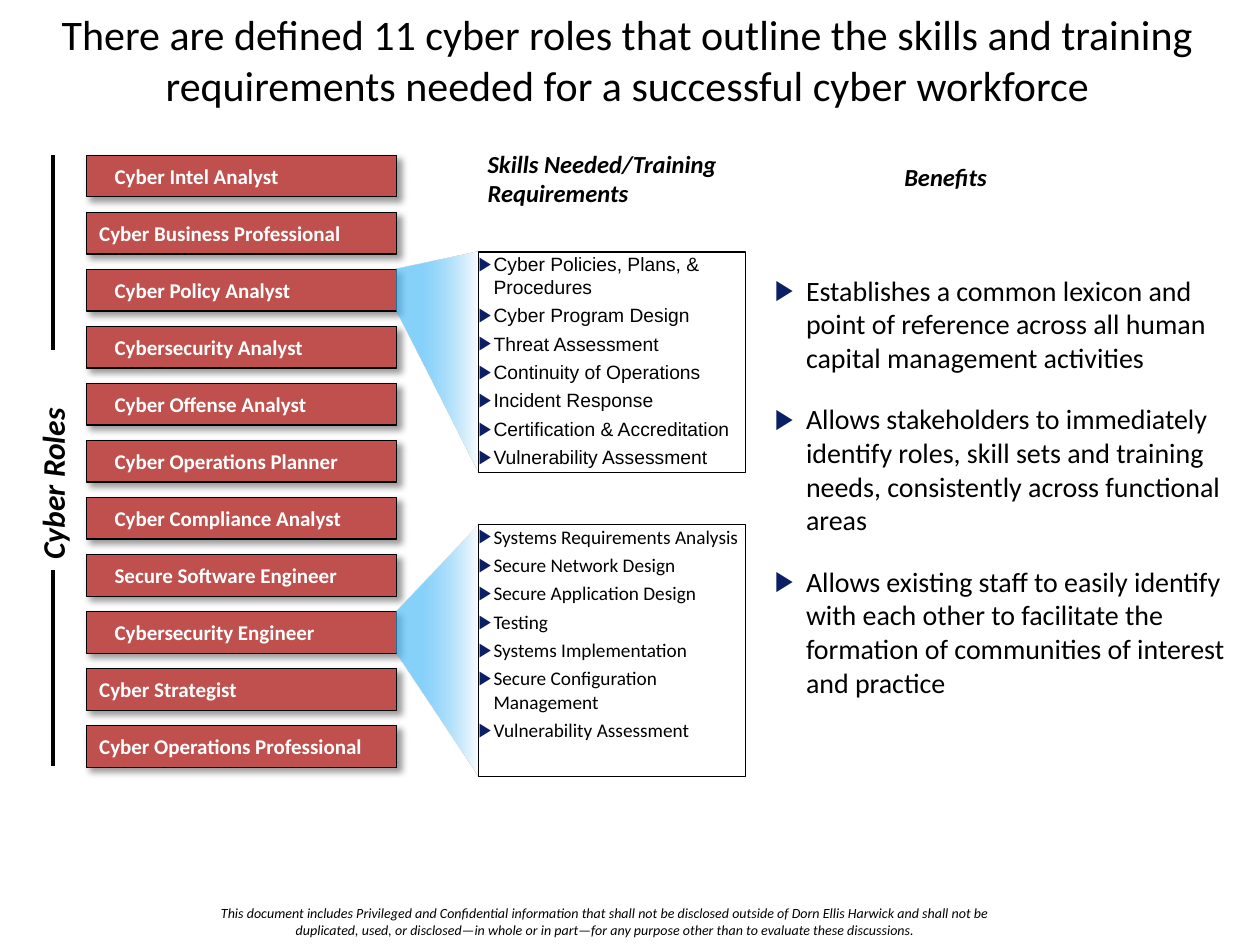
import pptx
import pptx.util
import pptx.dml.color
import pptx.enum.dml
import pptx.enum.shapes
import pptx.enum.text
import pptx.oxml
import pptx.oxml.ns
from lxml import etree

Cm = pptx.util.Cm
Pt = pptx.util.Pt
RGBColor = pptx.dml.color.RGBColor
RECTANGLE = pptx.enum.shapes.MSO_SHAPE.RECTANGLE
STRAIGHT = pptx.enum.shapes.MSO_CONNECTOR.STRAIGHT
ANCHOR = pptx.enum.text.MSO_ANCHOR
ALIGN = pptx.enum.text.PP_ALIGN
qn = pptx.oxml.ns.qn

BLACK = RGBColor(0x00, 0x00, 0x00)
WHITE = RGBColor(0xFF, 0xFF, 0xFF)
ROLE_RED = RGBColor(0xC0, 0x50, 0x4D)
BULLET_NAVY = RGBColor(0x0B, 0x1F, 0x65)
WEDGE_BLUE = RGBColor(0x4E, 0xBC, 0xF9)
WEDGE_PALE = RGBColor(0xFD, 0xFD, 0xFE)
NS = 'xmlns:a="http://schemas.openxmlformats.org/drawingml/2006/main"'


def write(tf, *texts, size, font="Calibri", color=BLACK, bold=False, italic=False,
          align=ALIGN.LEFT, anchor=ANCHOR.TOP, margins=(0.25, 0.13, 0.25, 0.13),
          indent=0, gap=0):
    """Fill a text frame, one paragraph per text; an indent makes them bullets."""
    tf.word_wrap = True
    tf.auto_size = pptx.enum.text.MSO_AUTO_SIZE.NONE
    tf.vertical_anchor = anchor
    tf.margin_left, tf.margin_top, tf.margin_right, tf.margin_bottom = map(Cm, margins)
    for i, text in enumerate(texts):
        p = tf.add_paragraph() if i else tf.paragraphs[0]
        if indent:
            pPr = p._p.get_or_add_pPr()
            pPr.set("marL", str(Cm(indent)))
            pPr.set("indent", str(-Cm(indent)))
            for xml in (f'<a:buClr {NS}><a:srgbClr val="{BULLET_NAVY}"/></a:buClr>',
                        f'<a:buFont {NS} typeface="Arial"/>',
                        f'<a:buChar {NS} char="▶"/>'):
                pPr.append(pptx.oxml.parse_xml(xml))
        p.alignment = align
        p.space_before = Pt(gap if i else 0)
        r = p.add_run()
        r.text = text
        r.font.name, r.font.size, r.font.color.rgb = font, Pt(size), color
        r.font.bold, r.font.italic = bold, italic


prs = pptx.Presentation()
prs.slide_width, prs.slide_height = Cm(25.4), Cm(19.05)
s = prs.slides.add_slide(prs.slide_layouts[5])

title = s.shapes.title
title.left, title.top, title.width, title.height = Cm(0.84), Cm(0.2), Cm(23.62), Cm(1.98)
write(title.text_frame,
      "There are defined 11 cyber roles that outline the skills and training "
      "requirements needed for a successful cyber workforce",
      size=24, align=ALIGN.CENTER, anchor=ANCHOR.MIDDLE)

# Column of roles: name and left inset
ROLE_LEFT, ROLE_TOP, ROLE_WIDTH, ROLE_HEIGHT, ROLE_PITCH = 1.75, 3.13, 6.25, 0.84, 1.15
roles = [("Cyber Intel Analyst", 0.56), ("Cyber Business Professional", 0.25),
         ("Cyber Policy Analyst", 0.56), ("Cybersecurity Analyst", 0.56),
         ("Cyber Offense Analyst", 0.56), ("Cyber Operations Planner", 0.56),
         ("Cyber Compliance Analyst", 0.56), ("Secure Software Engineer", 0.56),
         ("Cybersecurity Engineer", 0.56), ("Cyber Strategist", 0.25),
         ("Cyber Operations Professional", 0.25)]
for i, (role, inset) in enumerate(roles):
    sp = s.shapes.add_shape(RECTANGLE, Cm(ROLE_LEFT), Cm(ROLE_TOP + i * ROLE_PITCH),
                            Cm(ROLE_WIDTH), Cm(ROLE_HEIGHT))
    sp.fill.solid()
    sp.fill.fore_color.rgb = ROLE_RED
    sp.line.color.rgb, sp.line.width = BLACK, Pt(0.75)
    sp.shadow.inherit = False
    sp._element.spPr.find(qn("a:effectLst")).append(pptx.oxml.parse_xml(
        f'<a:outerShdw {NS} blurRad="{Pt(4)}" dist="{Pt(3)}" dir="2700000" algn="tl" '
        'rotWithShape="0"><a:srgbClr val="000000"><a:alpha val="40000"/></a:srgbClr>'
        '</a:outerShdw>'))
    write(sp.text_frame, role, size=12, color=WHITE, bold=True,
          anchor=ANCHOR.MIDDLE, margins=(inset, 0, 0.25, 0))

# Vertical label between two rules
label = s.shapes.add_textbox(Cm(-1.17), Cm(8.79), Cm(4.45), Cm(1.02))
label.rotation = 270
write(label.text_frame, "Cyber Roles", size=18, bold=True, italic=True)
for top, bottom in ((3.13, 7.06), (11.5, 15.44)):
    rule = s.shapes.add_connector(STRAIGHT, Cm(1.07), Cm(top), Cm(1.07), Cm(bottom))
    rule.line.color.rgb, rule.line.width = BLACK, Pt(2.25)
    etree.SubElement(rule._element.spPr, qn("a:effectLst"))

for heading, left, top, width, height in (
        ("Skills Needed/Training Requirements", 9.58, 2.87, 5.54, 1.45),
        ("Benefits", 17.98, 3.13, 3.84, 0.86)):
    tb = s.shapes.add_textbox(Cm(left), Cm(top), Cm(width), Cm(height))
    write(tb.text_frame, heading, size=14, bold=True, italic=True)

# Skill lists, each fanned out from its role
SKILLS_LEFT, SKILLS_WIDTH = 9.65, 5.38
skill_lists = [
    (2, 5.08, 4.45, "Arial",
     ["Cyber Policies, Plans, & Procedures", "Cyber Program Design", "Threat Assessment",
      "Continuity of Operations", "Incident Response", "Certification & Accreditation",
      "Vulnerability Assessment"]),
    (8, 10.58, 5.08, "Calibri",
     ["Systems Requirements Analysis", "Secure Network Design",
      "Secure Application Design", "Testing", "Systems Implementation",
      "Secure Configuration Management", "Vulnerability Assessment"]),
]
for row, top, height, font, skills in skill_lists:
    role_right, role_top = ROLE_LEFT + ROLE_WIDTH, ROLE_TOP + row * ROLE_PITCH
    fb = s.shapes.build_freeform(Cm(role_right), Cm(role_top))
    fb.add_line_segments([(Cm(SKILLS_LEFT), Cm(top)),
                          (Cm(SKILLS_LEFT), Cm(top + height)),
                          (Cm(role_right), Cm(role_top + ROLE_HEIGHT))], close=True)
    wedge = fb.convert_to_shape()
    wedge.shadow.inherit = False
    wedge.line.fill.background()
    wedge.fill.gradient()
    wedge.fill.gradient_angle = 0
    near, far = wedge.fill.gradient_stops
    near.position, near.color.rgb = 0.32, WEDGE_BLUE
    far.position, far.color.rgb = 1, WEDGE_PALE
    near_color = next(wedge._element.spPr.iter(qn("a:srgbClr")))
    etree.SubElement(near_color, qn("a:alpha")).set("val", "67000")

    box = s.shapes.add_shape(RECTANGLE, Cm(SKILLS_LEFT), Cm(top),
                             Cm(SKILLS_WIDTH), Cm(height))
    box.shadow.inherit = False
    box.fill.background()
    box.line.color.rgb, box.line.width = BLACK, Pt(0.75)
    write(box.text_frame, *skills, size=11, font=font, margins=(0, 0, 0, 0),
          indent=0.3, gap=3)

benefits = s.shapes.add_textbox(Cm(15.62), Cm(5.51), Cm(9.37), Cm(4.45))
write(benefits.text_frame,
      "Establishes a common lexicon and point of reference across all human capital "
      "management activities",
      "Allows stakeholders to immediately identify roles, skill sets and training needs, "
      "consistently across functional areas",
      "Allows existing staff to easily identify with each other to facilitate the "
      "formation of communities of interest and practice",
      size=16, margins=(0, 0, 0, 0), indent=0.63, gap=16)

notice = s.shapes.add_textbox(Cm(3.94), Cm(18.24), Cm(16.54), Cm(0.69))
write(notice.text_frame,
      "This document includes Privileged and Confidential information that shall not be "
      "disclosed outside of Dorn Ellis Harwick and shall not be duplicated, used, or "
      "disclosed—in whole or in part—for any purpose other than to evaluate these "
      "discussions.",
      size=8, italic=True, align=ALIGN.CENTER, margins=(0, 0, 0, 0))

prs.save("out.pptx")
